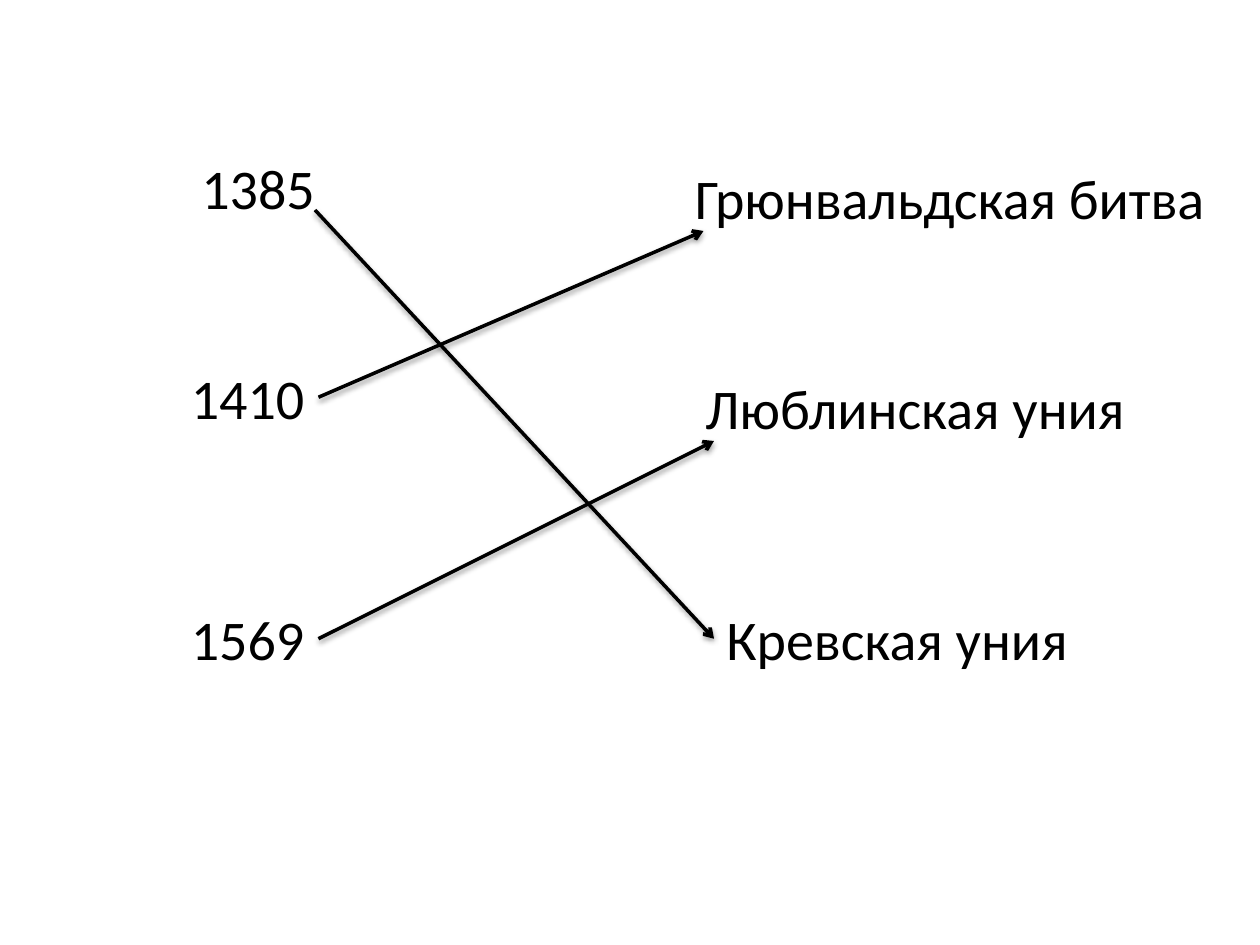
from lxml.etree import SubElement
from pptx import Presentation
from pptx.dml.color import RGBColor
from pptx.enum.shapes import MSO_CONNECTOR
from pptx.enum.text import MSO_AUTO_SIZE
from pptx.oxml import parse_xml
from pptx.oxml.ns import nsdecls, qn
from pptx.util import Pt

BLACK = RGBColor(0, 0, 0)
FONT = "Calibri"
LABEL_HEIGHT = 46
RIGHT_SIDE, LEFT_SIDE = 3, 1

LABELS = [
    ("1385", 108, 84, 80),
    ("1410", 102, 204, 80),
    ("1569", 102, 342, 80),
    ("Грюнвальдская битва", 390, 90, 309),
    ("Кревская уния", 408, 342, 212),
    ("Люблинская уния", 396, 210, 256),
]
ARROWS = [
    ((182, 365), (408, 252), "1569", None),
    ((180, 120), (408, 365), None, "Кревская уния"),
    ((182, 227), (402, 132), "1410", None),
]
SHADOW = (
    f'<a:effectLst {nsdecls("a")}>'
    '<a:outerShdw blurRad="40000" dist="20000" dir="5400000" rotWithShape="0">'
    '<a:srgbClr val="000000"><a:alpha val="38000"/></a:srgbClr>'
    '</a:outerShdw></a:effectLst>'
)


def add_label(slide, text, left, top, width):
    box = slide.shapes.add_textbox(Pt(left), Pt(top), Pt(width), Pt(LABEL_HEIGHT))
    frame = box.text_frame
    frame.text = text
    frame.word_wrap = False
    frame.auto_size = MSO_AUTO_SIZE.SHAPE_TO_FIT_TEXT
    font = frame.paragraphs[0].runs[0].font
    font.name = FONT
    font.size = Pt(32)
    font.color.rgb = BLACK
    return box


def add_arrow(slide, start, end, source, target):
    arrow = slide.shapes.add_connector(
        MSO_CONNECTOR.STRAIGHT, *map(Pt, start + end))
    if source is not None:
        arrow.begin_connect(source, RIGHT_SIDE)
    if target is not None:
        arrow.end_connect(target, LEFT_SIDE)
    arrow.line.color.rgb = BLACK
    arrow.line.width = Pt(2)
    properties = arrow.element.spPr
    SubElement(properties.find(qn("a:ln")), qn("a:tailEnd"), type="arrow")
    properties.append(parse_xml(SHADOW))


def main():
    presentation = Presentation()
    presentation.slide_width = Pt(720)
    presentation.slide_height = Pt(540)
    slide = presentation.slides.add_slide(presentation.slide_layouts[6])
    boxes = {label[0]: add_label(slide, *label) for label in LABELS}
    for start, end, source, target in ARROWS:
        add_arrow(slide, start, end, boxes.get(source), boxes.get(target))
    presentation.save("out.pptx")


if __name__ == "__main__":
    main()
